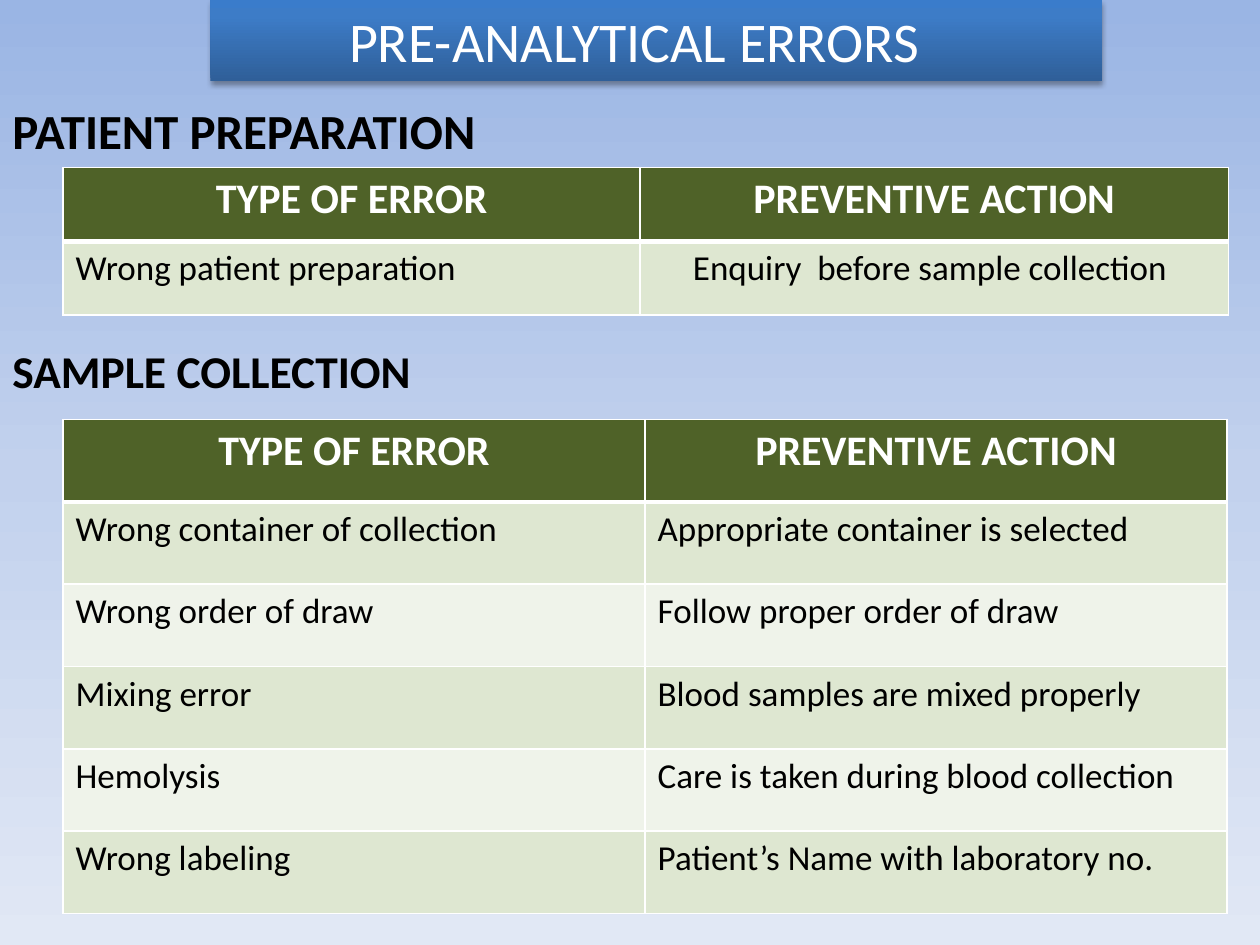
from lxml.etree import SubElement
from pptx import Presentation
from pptx.dml.color import RGBColor as RGB
from pptx.enum.text import MSO_ANCHOR, MSO_AUTO_SIZE, PP_ALIGN
from pptx.oxml import parse_xml
from pptx.oxml.ns import nsdecls, qn
from pptx.util import Inches, Pt

FONT = "Calibri"
WHITE = RGB(0xFF, 0xFF, 0xFF)
BLACK = RGB(0, 0, 0)
HEADER_GREEN = RGB(0x4F, 0x62, 0x28)
BANDS = (RGB(0xDE, 0xE7, 0xD1), RGB(0xEF, 0xF3, 0xEA))
SKY_STOPS = (
    (0, RGB(0x9A, 0xB5, 0xE4)),
    (50, RGB(0xC2, 0xD1, 0xED)),
    (100, RGB(0xE1, 0xE8, 0xF5)),
)
BANNER_STOPS = (
    (0, RGB(0x2F, 0x5F, 0x99)),
    (80, RGB(0x3D, 0x7C, 0xC7)),
    (100, RGB(0x3A, 0x7C, 0xCB)),
)

HEADER = ("TYPE OF ERROR", "PREVENTIVE ACTION")
PREPARATION_ROWS = (
    HEADER,
    ("Wrong patient preparation", "Enquiry  before sample collection"),
)
COLLECTION_ROWS = (
    HEADER,
    ("Wrong container of collection", "Appropriate container is selected"),
    ("Wrong order of draw", "Follow proper order of draw"),
    ("Mixing error", "Blood samples are mixed properly"),
    ("Hemolysis", "Care is taken during blood collection"),
    ("Wrong labeling", "Patient’s Name with laboratory no."),
)


def set_gradient(fill, element, stops, angle):
    """Fill with any number of stops; angle runs counter-clockwise."""
    fill.gradient()
    fill.gradient_angle = angle
    gs_list = next(element.iter(qn("a:gsLst")))
    for gs in list(gs_list):
        gs_list.remove(gs)
    for percent, color in stops:
        gs = SubElement(gs_list, qn("a:gs"), pos=str(percent * 1000))
        SubElement(gs, qn("a:srgbClr"), val=str(color))


def style_text(p, size, color, bold=False, align=PP_ALIGN.LEFT):
    p.alignment = align
    p.font.name = FONT
    p.font.size = Pt(size)
    p.font.bold = bold
    p.font.color.rgb = color


def add_shadow(sp):
    sp._element.spPr.append(parse_xml(
        f'<a:effectLst {nsdecls("a")}>'
        f'<a:outerShdw blurRad="{Pt(3.1)}" dist="{Pt(1.8)}" dir="5400000" rotWithShape="0">'
        '<a:srgbClr val="000000"><a:alpha val="35000"/></a:srgbClr>'
        '</a:outerShdw></a:effectLst>'
    ))


def add_banner(slide, text):
    sp = slide.shapes.title
    sp.left, sp.top = Inches(1.67), Inches(0)
    sp.width, sp.height = Inches(7.08), Inches(0.64)
    set_gradient(sp.fill, sp._element, BANNER_STOPS, 90)
    add_shadow(sp)
    tf = sp.text_frame
    tf.text = text
    tf.auto_size = MSO_AUTO_SIZE.NONE
    tf.vertical_anchor = MSO_ANCHOR.TOP
    tf.margin_left = Inches(1.1)
    style_text(tf.paragraphs[0], 32, WHITE)


def add_heading(slide, text, top, width, height, size):
    box = slide.shapes.add_textbox(Inches(0), Inches(top), Inches(width), Inches(height))
    tf = box.text_frame
    tf.word_wrap = True
    tf.text = text
    style_text(tf.paragraphs[0], size, BLACK, bold=True)


def set_borders(cell, top, bottom):
    """Draw white borders: 1 pt at the sides, given points above and below."""
    tc_pr = cell._tc.get_or_add_tcPr()
    widths = {"lnL": 1, "lnR": 1, "lnT": top, "lnB": bottom}
    for i, (tag, width) in enumerate(widths.items()):
        tc_pr.insert(i, parse_xml(
            f'<a:{tag} {nsdecls("a")} w="{Pt(width)}"><a:solidFill>'
            f'<a:srgbClr val="{WHITE}"/></a:solidFill></a:{tag}>'
        ))


def style_cell(cell, row, col):
    p = cell.text_frame.paragraphs[0]
    cell.fill.solid()
    if row == 0:
        cell.fill.fore_color.rgb = HEADER_GREEN
        style_text(p, 24, WHITE, bold=True, align=PP_ALIGN.CENTER)
    else:
        cell.fill.fore_color.rgb = BANDS[(row - 1) % 2]
        style_text(p, 20, BLACK, align=PP_ALIGN.LEFT if col else PP_ALIGN.JUSTIFY)
    set_borders(cell, top=3 if row == 1 else 1, bottom=3 if row == 0 else 1)


def add_error_table(slide, rows, top, height, col_widths):
    table = slide.shapes.add_table(
        len(rows), len(HEADER), Inches(0.5), Inches(top), Inches(9.25), Inches(height)
    ).table
    for column, width in zip(table.columns, col_widths):
        column.width = Inches(width)
    for r, texts in enumerate(rows):
        for c, text in enumerate(texts):
            cell = table.cell(r, c)
            cell.text = text
            style_cell(cell, r, c)
    return table


def main():
    prs = Presentation()
    prs.slide_width, prs.slide_height = Inches(10), Inches(7.5)
    slide = prs.slides.add_slide(prs.slide_layouts[5])
    set_gradient(slide.background.fill, slide._element, SKY_STOPS, 270)

    add_banner(slide, "PRE-ANALYTICAL ERRORS")
    add_heading(slide, "PATIENT PREPARATION", 0.75, 5.5, 0.88, 28)
    preparation = add_error_table(slide, PREPARATION_ROWS, 1.33, 1.17, (4.58, 4.67))
    preparation.cell(1, 1).margin_left = Inches(0.42)
    add_heading(slide, "SAMPLE COLLECTION", 2.67, 4.33, 0.54, 26)
    add_error_table(slide, COLLECTION_ROWS, 3.33, 3.92, (4.62, 4.62))

    prs.save("out.pptx")


if __name__ == "__main__":
    main()
